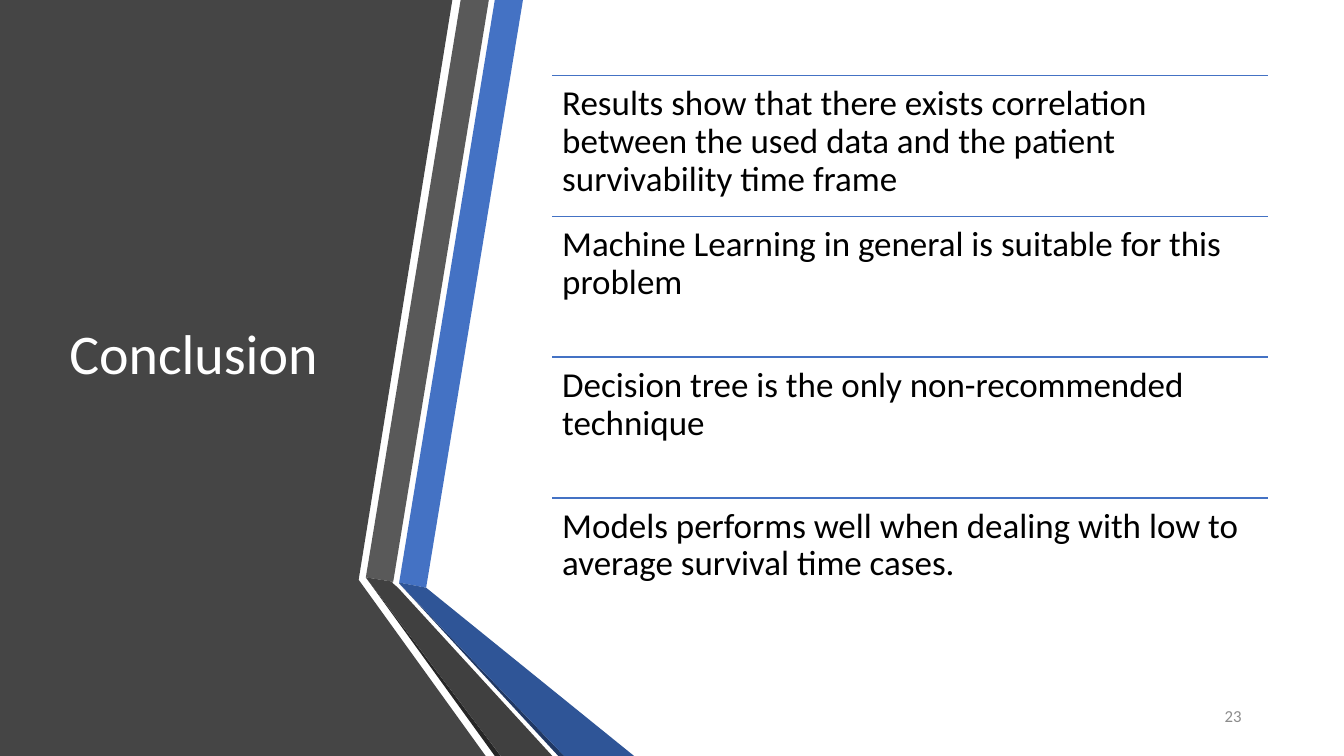
from lxml import etree
from pptx import Presentation
from pptx import util as u
from pptx.dml.color import RGBColor
from pptx.enum import shapes, text
from pptx.oxml.ns import qn

WIDTH, HEIGHT = 33.87, 19.05

# Corners in cm, from back to front
RIBBONS = [
    ("454545", [(0, 0), (11.4, 0), (9.04, 14.61), (12.24, HEIGHT), (0, HEIGHT)]),
    ("4472C4", [(10.06, 14.68), (10.74, 14.81), (13.18, 0), (12.47, 0)]),
    ("595959", [(12.32, 0), (11.61, 0), (9.22, 14.55), (9.91, 14.66)]),
    ("262626", [(9.22, 14.55), (12.47, HEIGHT), (12.62, HEIGHT)]),
    ("203864", [(10.06, 14.7), (14.07, HEIGHT), (14.22, HEIGHT)]),
    ("2F5597", [(10.06, 14.7), (14.22, HEIGHT), (15.98, HEIGHT),
                (10.74, 14.81), (10.06, 14.68)]),
    ("404040", [(13.92, HEIGHT), (10.03, 14.81), (9.88, 14.68),
                (9.91, 14.66), (9.22, 14.55), (12.62, HEIGHT)]),
]

CONCLUSIONS = [
    "Results show that there exists correlation between the used data "
    "and the patient survivability time frame",
    "Machine Learning in general is suitable for this problem",
    "Decision tree is the only non-recommended technique",
    "Models performs well when dealing with low to average survival time cases.",
]
LIST_LEFT, LIST_TOP, LIST_WIDTH, ROW_HEIGHT = 13.92, 1.9, 18.03, 3.55


def color(hex_string):
    return RGBColor.from_string(hex_string)


def write(frame, content, size=25, fill="000000", font="Calibri",
          align=text.PP_ALIGN.LEFT, line_spacing=1.0, space_after=0):
    paragraph = frame.paragraphs[0]
    paragraph.alignment = align
    paragraph.line_spacing = line_spacing
    paragraph.space_after = u.Pt(space_after)
    run = paragraph.add_run()
    run.text = content
    run.font.name = font
    run.font.size = u.Pt(size)
    run.font.color.rgb = color(fill)


class SlideBuilder:
    """Holds the shared style and the slide being drawn."""
    font = "Calibri"
    accent = "4472C4"

    def __init__(self, slide):
        self.slide = slide

    def polygon(self, points, fill):
        corners = [(u.Cm(x), u.Cm(y)) for x, y in points]
        builder = self.slide.shapes.build_freeform(*corners[0], scale=1.0)
        builder.add_line_segments(corners[1:], close=True)
        shape = builder.convert_to_shape()
        shape.shadow.inherit = False
        shape.fill.solid()
        shape.fill.fore_color.rgb = color(fill)
        shape.line.fill.background()

    def rule(self, left, top, width):
        line = self.slide.shapes.add_connector(
            shapes.MSO_CONNECTOR.STRAIGHT,
            u.Cm(left), u.Cm(top), u.Cm(left + width), u.Cm(top))
        line.line.color.rgb = color(self.accent)
        line.line.width = u.Pt(1)
        etree.SubElement(line._element.spPr, qn("a:effectLst"))

    def label(self, content, left, top, width, height,
              anchor=text.MSO_ANCHOR.MIDDLE, inset=0.13, **style):
        box = self.slide.shapes.add_textbox(
            u.Cm(left), u.Cm(top), u.Cm(width), u.Cm(height))
        frame = box.text_frame
        frame.word_wrap = True
        frame.vertical_anchor = anchor
        frame.margin_left = frame.margin_right = u.Cm(0.25)
        frame.margin_top = frame.margin_bottom = u.Cm(inset)
        write(frame, content, font=self.font, **style)


def main():
    presentation = Presentation()
    presentation.slide_width = u.Cm(WIDTH)
    presentation.slide_height = u.Cm(HEIGHT)
    builder = SlideBuilder(presentation.slides.add_slide(presentation.slide_layouts[6]))

    for fill, points in RIBBONS:
        builder.polygon(points, fill)

    builder.label("Conclusion", 1.5, 1.9, 7.72, 14.17,
                  size=40, fill="FFFFFF", line_spacing=0.9)
    builder.label("23", 28.52, 17.53, 3.02, 1.02, size=12, fill="8C8C8C",
                  align=text.PP_ALIGN.RIGHT, space_after=6)

    for row, conclusion in enumerate(CONCLUSIONS):
        top = LIST_TOP + row * ROW_HEIGHT
        builder.rule(LIST_LEFT, top, LIST_WIDTH)
        builder.label(conclusion, LIST_LEFT, top, LIST_WIDTH, ROW_HEIGHT,
                      anchor=text.MSO_ANCHOR.TOP, inset=0.25,
                      line_spacing=0.9, space_after=8.75)

    presentation.save("out.pptx")


if __name__ == "__main__":
    main()
